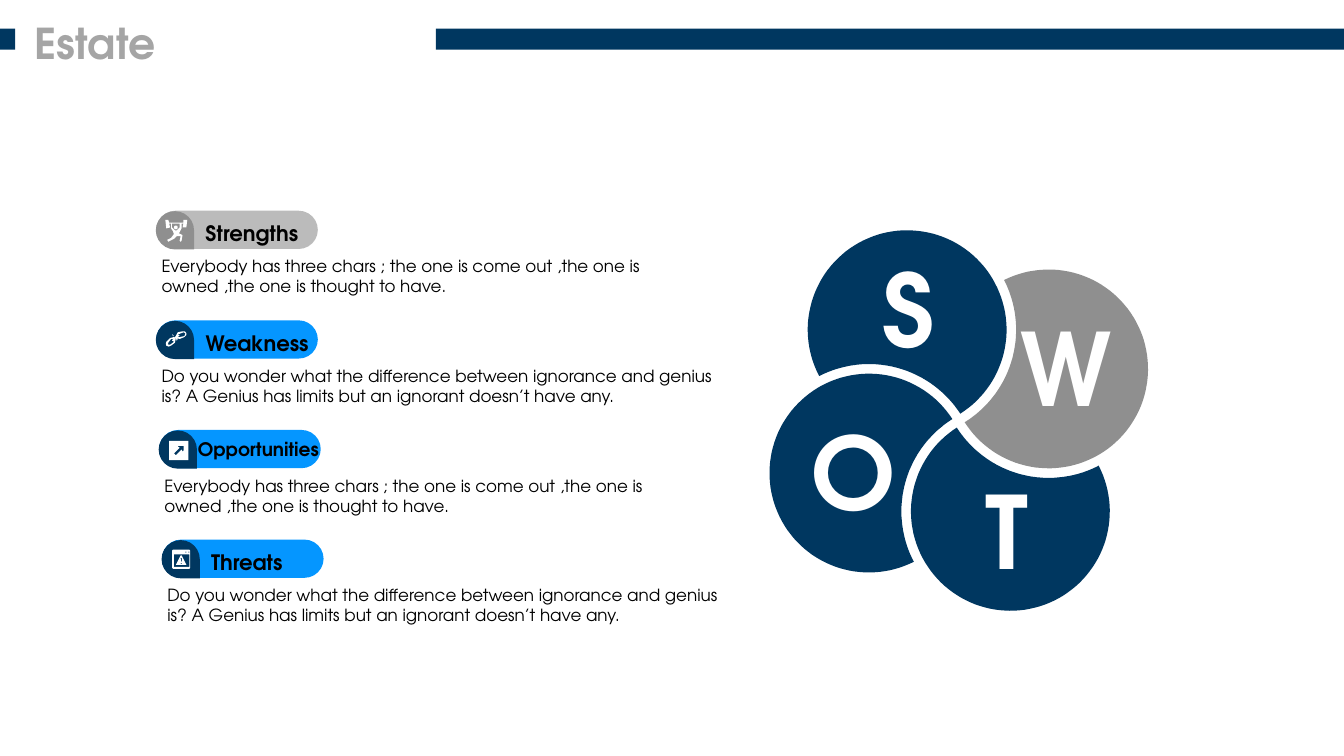
"""Build the Estate SWOT slide: four labelled rows beside four interlocking petals."""
from math import acos, atan2, cos, hypot, pi, sin

from pptx import Presentation
from pptx.dml.color import RGBColor
from pptx.enum import shapes, text
from pptx.util import Inches, Pt

NAVY, BLUE, GREY, SILVER = "003760", "0596FF", "8F8F8F", "BBBBBB"
WHITE, BLACK = "FFFFFF", "000000"


def paint(shape, color):
    shape.shadow.inherit = False
    shape.fill.solid()
    shape.fill.fore_color.rgb = RGBColor.from_string(color)
    shape.line.fill.background()


def write(words, place, size, color, bold=True, wrap=False, center=False, insets=(0.13, 0.06, 0.13, 0.06)):
    box = page.shapes.add_textbox(*map(Inches, place))
    frame = box.text_frame
    left, top, right, bottom = map(Inches, insets)
    layout = {"margin_left": left, "margin_top": top, "margin_right": right, "margin_bottom": bottom,
              "word_wrap": wrap, "vertical_anchor": text.MSO_ANCHOR.TOP}
    for name, value in layout.items():
        setattr(frame, name, value)
    para = frame.paragraphs[0]
    para.alignment = text.PP_ALIGN.CENTER if center else text.PP_ALIGN.LEFT
    span = para.add_run()
    span.text = words
    for name, value in {"name": "TeX Gyre Adventor", "size": Pt(size), "bold": bold}.items():
        setattr(span.font, name, value)
    span.font.color.rgb = RGBColor.from_string(color)


deck = Presentation()
deck.slide_width, deck.slide_height = Inches(14.06), Inches(7.91)
page = deck.slides.add_slide(deck.slide_layouts[6])

RADIUS, BITE, STEPS, UNITS = 1.04, 1.14, 90, 1000
petals = {
    "S": ((9.49, 3.45), "O", NAVY, (8.81, 2.51)),
    "W": ((10.97, 3.86), "S", GREY, (10.45, 3.13)),
    "T": ((10.57, 5.35), "W", NAVY, (9.83, 4.83)),
    "O": ((9.09, 4.95), "T", NAVY, (8.23, 4.22)),
}
for center, neighbor, color, _ in petals.values():
    other = petals[neighbor][0]
    dx, dy = other[0] - center[0], other[1] - center[1]
    gap, toward = hypot(dx, dy), atan2(dy, dx)
    outer = acos((gap**2 + RADIUS**2 - BITE**2) / (2 * gap * RADIUS))
    inner = acos((gap**2 + BITE**2 - RADIUS**2) / (2 * gap * BITE))
    outline = []
    for (x, y), radius, start, end in (
        (center, RADIUS, toward + outer, toward + 2 * pi - outer),
        (other, BITE, toward + pi + inner, toward + pi - inner),
    ):
        for step in range(STEPS + 1):
            angle = start + (end - start) * step / STEPS
            outline.append(((x + radius * cos(angle)) * UNITS, (y + radius * sin(angle)) * UNITS))
    builder = page.shapes.build_freeform(*outline[0], scale=Inches(1) / UNITS)
    builder.add_line_segments(outline[1:])
    paint(builder.convert_to_shape(), color)
for letter, (_, _, _, corner) in petals.items():
    write(letter, (*corner, 1.4, 1.42), 75.9, WHITE, wrap=True, center=True, insets=(0.14, 0.07, 0.14, 0.07))

lifter = [
    [(33, 9), (32, 17), (28, 17), (29, 13), (27, 13), (27, 18), (25, 22), (24, 23), (28, 25), (27, 31),
     (26, 32), (25, 31), (26, 26), (22, 26), (19, 29), (13, 32), (12, 30), (16, 28), (19, 24), (18, 21),
     (16, 18), (16, 13), (14, 13), (15, 17), (11, 18), (10, 9), (13, 9), (14, 12), (29, 12), (29, 9)],
    [(25, 13), (17, 13), (17, 17), (20, 20), (22, 20), (25, 17)],
    [(21, 15), (22.5, 15.5), (23, 17), (22.5, 18.5), (21, 19), (19.5, 18.5), (19, 17), (19.5, 15.5)],
]
chain = [
    [(21, 18), (19, 17), (15, 18), (11, 22), (10.5, 24), (11, 26), (13.5, 27), (16, 26), (20, 23), (20.5, 21)],
    [(19, 22), (15, 25), (13, 25), (13, 23), (16, 19), (18, 19), (17, 21), (18, 21)],
    [(32, 13), (30.5, 11), (28, 11), (23, 12), (21, 16), (20, 17), (21, 18), (25, 19), (30, 17), (32, 15)],
    [(30, 16), (25, 17), (23, 17), (25, 15), (23, 15), (24, 14), (29, 12), (31, 13)],
    [(21, 18), (23, 19), (22, 21)],
    [(18, 16), (17, 14), (19, 16)],
]
arrow = [
    [(11, 11), (31, 11), (31, 31), (11, 31)],
    [(26, 21), (25, 22), (24, 20), (18, 26), (16, 24), (22, 18), (20, 17), (21, 16), (26, 16)],
]
warning = [
    [(12, 10), (29, 10), (30, 11), (30, 29), (29, 30), (12, 30), (11, 29), (11, 11)],
    [(13, 15), (29, 15), (29, 28), (13, 28)],
    [(25, 12), (26, 12), (26, 13), (25, 13)],
    [(28, 12), (29, 12), (29, 13), (28, 13)],
    [(15, 26), (26, 26), (21, 16), (20, 16)],
    [(20, 19), (21.5, 19), (21, 23), (20.5, 23)],
    [(20, 24), (21.5, 24), (21.5, 25), (20, 25)],
]

chars = "Everybody has three chars ; the one is come out ,the one is owned ,the one is thought to have."
genius = ("Do you wonder what the difference between ignorance and genius is? "
          "A Genius has limits but an ignorant doesn’t have any.")
rows = [
    ("Strengths", 1.63, 16, (0.39, 0.04), (1.24, 0.4), SILVER, GREY, lifter, chars, 6.08, 0.4),
    ("Weakness", 1.63, 16, (0.39, 0.04), (1.35, 0.4), BLUE, NAVY, chain, genius, 6.08, 0.1),
    ("Opportunities", 1.66, 14, (0.28, 0.02), (1.53, 0.36), BLUE, NAVY, arrow, chars, 5.96, 0.4),
    ("Threats", 1.69, 16, (0.39, 0.04), (1.01, 0.4), BLUE, NAVY, warning, genius, 6.02, 0.1),
]
for index, (label, x, size, shift, extent, pill_color, tab_color, icon, story, width, right) in enumerate(rows):
    y = 2.21 + 1.147 * index
    for kind, place, color in (
        (shapes.MSO_SHAPE.ROUND_2_SAME_RECTANGLE, (x + 0.65, y - 0.65, 0.4, 1.69), pill_color),
        (shapes.MSO_SHAPE.TEAR, (x, y, 0.4, 0.4), tab_color),
    ):
        shape = page.shapes.add_shape(kind, *map(Inches, place))
        shape.rotation = 90
        if kind == shapes.MSO_SHAPE.ROUND_2_SAME_RECTANGLE:
            shape.adjustments[0] = shape.adjustments[1] = 0.5
        paint(shape, color)
    write(label, (x + shift[0], y + shift[1], *extent), size, BLACK)
    contours = [[(across * 10, down * 10) for across, down in contour] for contour in icon]
    builder = page.shapes.build_freeform(*contours[0][0], scale=Inches(1) / UNITS)
    builder.add_line_segments(contours[0][1:])
    for contour in contours[1:]:
        builder.move_to(*contour[0])
        builder.add_line_segments(contour[1:])
    paint(builder.convert_to_shape(Inches(x), Inches(y)), WHITE)
    write(story, (x - 0.07, y + 0.41, width, 0.55), 12.6, BLACK, bold=False, wrap=True,
          insets=(0.13, 0.06, right, 0.06))

for left, width in ((4.56, 9.5), (0, 0.16)):
    bar = page.shapes.add_shape(shapes.MSO_SHAPE.RECTANGLE, *map(Inches, (left, 0.3, width, 0.22)))
    paint(bar, NAVY)
write("Estate", (0.36, 0.18, 1.28, 0.54), 32, "A5A5A5", insets=(0, 0, 0, 0))

deck.save("out.pptx")
